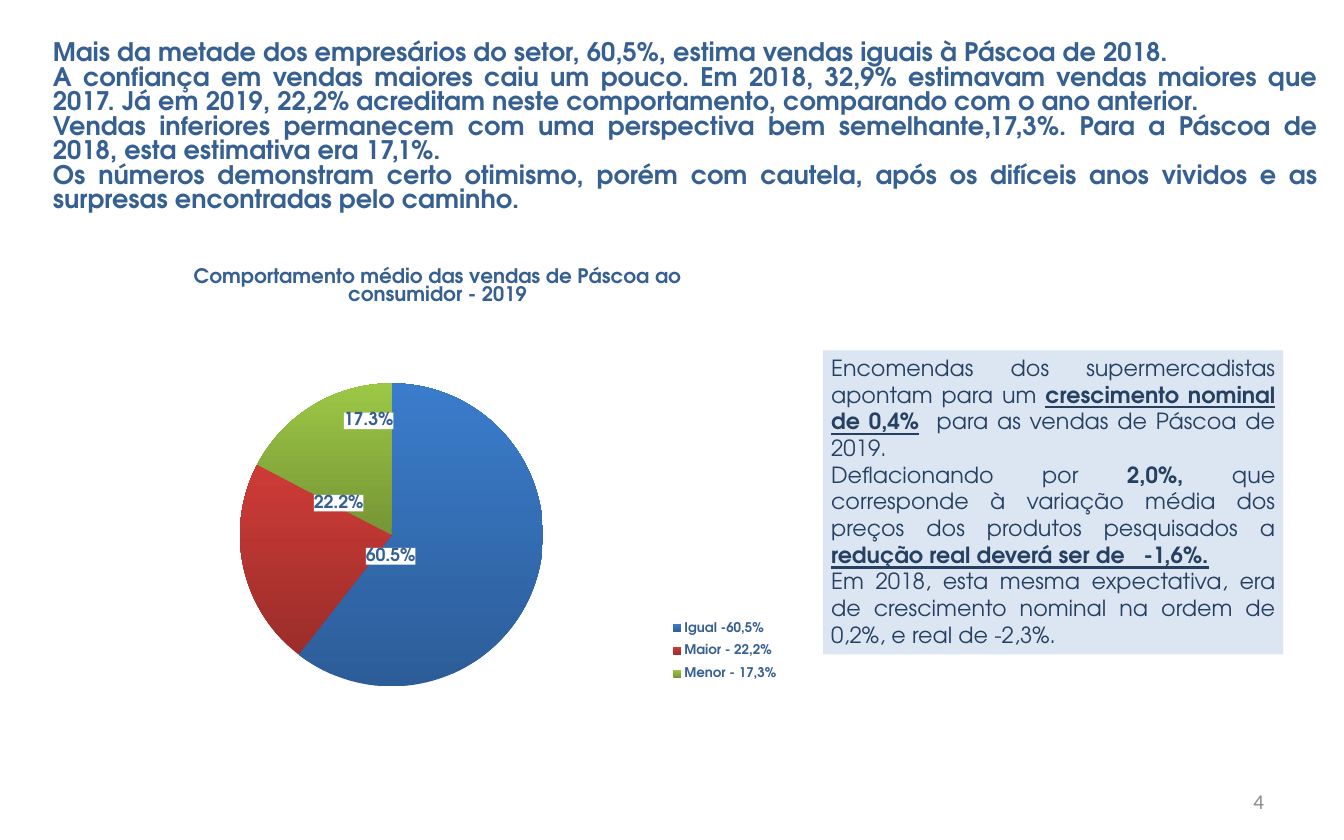
"""Build the slide on expected Easter sales in 2019."""
from lxml import etree
from pptx import Presentation
from pptx import util as u
from pptx.chart import data as chart_data
from pptx.dml import color
from pptx.enum import chart as chart_enum, shapes, text
from pptx.oxml import parse_xml
from pptx.oxml.ns import nsdecls, qn

ALIGN = text.PP_ALIGN
ANCHOR = text.MSO_ANCHOR


def rgb(value):
    return color.RGBColor.from_string(value)


def inches(values):
    return [u.Inches(value) for value in values]


class SlideBuilder:
    FONT = "TeX Gyre Adventor"
    BLUE = "376092"
    NAVY = "254061"
    PALE = "DCE6F2"

    def __init__(self, slide):
        self.slide = slide

    def style(self, font, size, shade, bold=False, name=FONT):
        font.name, font.size, font.bold = name, u.Pt(size), bold
        font.color.rgb = rgb(shade)

    def fill_text(self, shape, paragraphs, size, shade, align, anchor, insets,
                  bold=False, name=FONT, spacing=None, indent=0):
        frame = shape.text_frame
        frame.word_wrap = True
        frame.vertical_anchor = anchor
        (frame.margin_left, frame.margin_top,
         frame.margin_right, frame.margin_bottom) = inches(insets)
        for number, runs in enumerate(paragraphs):
            paragraph = frame.add_paragraph() if number else frame.paragraphs[0]
            paragraph.alignment = align
            if spacing:
                paragraph.line_spacing = spacing
            if indent:
                paragraph._p.get_or_add_pPr().set("marL", str(u.Inches(indent)))
            self.style(paragraph.font, size, shade, bold, name)
            for content, emphasis in runs:
                run = paragraph.add_run()
                run.text = content
                if emphasis:
                    run.font.bold = True
                    run.font.underline = emphasis == "underline"

    def text_box(self, place, paragraphs, **options):
        shape = self.slide.shapes.add_textbox(*inches(place))
        self.fill_text(shape, paragraphs, **options)

    def panel(self, place, paragraphs, **options):
        shape = self.slide.shapes.add_shape(
            shapes.MSO_SHAPE.RECTANGLE, *inches(place))
        shape.shadow.inherit = False
        shape.fill.solid()
        shape.fill.fore_color.rgb = rgb(self.PALE)
        shape.line.fill.background()
        self.fill_text(shape, paragraphs, **options)

    def layout(self, parent, index, modes=(), **values):
        for old in parent.findall(qn("c:layout")):
            parent.remove(old)
        layout = etree.Element(qn("c:layout"))
        manual = etree.SubElement(layout, qn("c:manualLayout"))
        for tag, value in [*modes, *values.items()]:
            etree.SubElement(manual, qn(f"c:{tag}")).set("val", str(value))
        parent.insert(index, layout)

    def label(self, index, x, y):
        return parse_xml(f"""<c:dLbl {nsdecls("c", "a")}><c:idx val="{index}"/>
<c:layout><c:manualLayout><c:x val="{x}"/><c:y val="{y}"/></c:manualLayout></c:layout>
<c:numFmt formatCode="0.0%" sourceLinked="0"/>
<c:spPr><a:solidFill><a:srgbClr val="FFFFFF"><a:alpha val="85000"/></a:srgbClr></a:solidFill></c:spPr>
<c:txPr><a:bodyPr/><a:p><a:pPr><a:defRPr sz="1600" b="1"><a:solidFill>
<a:srgbClr val="{self.BLUE}"/></a:solidFill><a:latin typeface="{self.FONT}"/></a:defRPr></a:pPr>
<a:endParaRPr lang="en-US"/></a:p></c:txPr><c:dLblPos val="ctr"/>
<c:showLegendKey val="0"/><c:showVal val="0"/><c:showCatName val="0"/><c:showSerName val="0"/>
<c:showPercent val="1"/><c:showBubbleSize val="0"/></c:dLbl>""")

    def pie(self, place, title, slices):
        values = chart_data.CategoryChartData()
        values.categories = [name for name, *_ in slices]
        values.add_series("Vendas", [value for _, value, *_ in slices])
        chart = self.slide.shapes.add_chart(
            chart_enum.XL_CHART_TYPE.PIE, *inches(place), values).chart
        self.style(chart.font, 10, "000000", name="Calibri")
        edges = [("xMode", "edge"), ("yMode", "edge")]

        chart.has_title = True
        paragraph = chart.chart_title.text_frame.paragraphs[0]
        paragraph.text = title
        paragraph.alignment = ALIGN.CENTER
        paragraph.line_spacing = 0.8
        self.style(paragraph.font, 18, self.BLUE, True)
        self.layout(chart.chart_title._element, 1, edges, x=0.147, y=0.04)

        chart.has_legend = True
        chart.legend.position = chart_enum.XL_LEGEND_POSITION.RIGHT
        chart.legend.include_in_layout = False
        self.style(chart.legend.font, 12, self.BLUE, True)
        self.layout(chart.legend._element, 1, edges, x=0.82, y=0.8, w=0.17, h=0.17)

        plot = chart.plots[0]
        plot.vary_by_categories = True
        self.layout(chart._chartSpace.chart.plotArea, 0,
                    [("layoutTarget", "inner"), *edges],
                    x=0.073, y=0.303, w=0.719, h=0.659)
        series = plot.series[0]
        labels = series.data_labels
        labels.show_percentage, labels.show_value = True, False
        labels.number_format, labels.number_format_is_linked = "0.0%", False
        self.style(labels.font, 16, self.BLUE, True)
        for index, (_, _, dark, light, offset) in enumerate(slices):
            fill = series.points[index].format.fill
            fill.gradient()
            fill.gradient_angle = 90
            for stop, shade in zip(fill.gradient_stops, (dark, light)):
                stop.color.rgb = rgb(shade)
            labels._element.insert(index, self.label(index, *offset))


def main():
    presentation = Presentation()
    presentation.slide_width, presentation.slide_height = inches((16.8, 10.5))
    builder = SlideBuilder(
        presentation.slides.add_slide(presentation.slide_layouts[6]))

    findings = [
        "Mais da metade dos empresários do setor, 60,5%, estima vendas iguais à Páscoa de 2018.",
        "A confiança em vendas maiores caiu um pouco. Em 2018, 32,9% estimavam vendas maiores "
        "que 2017. Já em 2019, 22,2% acreditam neste comportamento, comparando com o ano anterior.",
        "Vendas inferiores permanecem com uma perspectiva bem semelhante,17,3%. "
        "Para a Páscoa de 2018, esta estimativa era 17,1%.",
        "Os números demonstram certo otimismo, porém com cautela, após os difíceis anos vividos "
        "e as surpresas encontradas pelo caminho.",
    ]
    builder.text_box(
        (0.6, 0.29, 15.99, 2.62), [[(finding, None)] for finding in findings],
        size=23, shade=builder.BLUE, bold=True, align=ALIGN.JUSTIFY,
        anchor=ANCHOR.MIDDLE, insets=(0, 0, 0.1, 0), spacing=0.8, indent=0.06)

    orders = [
        [("Encomendas dos supermercadistas apontam para um ", None),
         ("crescimento nominal de 0,4%", "underline"),
         ("  para as vendas de Páscoa de 2019.", None)],
        [("Deflacionando por ", None), ("2,0%,", "bold"),
         (" que corresponde à variação média dos preços dos produtos pesquisados a ", None),
         ("redução real deverá ser de   -1,6%.", "underline")],
        [("Em 2018, esta mesma expectativa, era de crescimento nominal na ordem de 0,2%, "
          "e real de -2,3%.", None)],
    ]
    builder.panel(
        (10.29, 4.38, 5.75, 3.8), orders, size=20, shade=builder.NAVY,
        align=ALIGN.JUSTIFY, anchor=ANCHOR.TOP, insets=(0.1, 0.05, 0.1, 0.05))

    builder.pie(
        (1.08, 3.05, 8.82, 5.75),
        "Comportamento médio das vendas de Páscoa ao consumidor - 2019",
        [("Igual -60,5%", 60.5, "2C5D98", "3A7CCB", (-0.103, -0.007)),
         ("Maior - 22,2%", 22.2, "9B2D2A", "CE3B37", (0.03, -0.104)),
         ("Menor - 17,3%", 17.3, "769535", "9CC746", (0.023, -0.107))])

    builder.text_box(
        (12.04, 9.73, 3.92, 0.56), [[("4", None)]], size=19, shade="8C8C8C",
        name="Calibri", align=ALIGN.RIGHT, anchor=ANCHOR.MIDDLE,
        insets=(0.16, 0.08, 0.16, 0.08))
    presentation.save("out.pptx")


if __name__ == "__main__":
    main()
